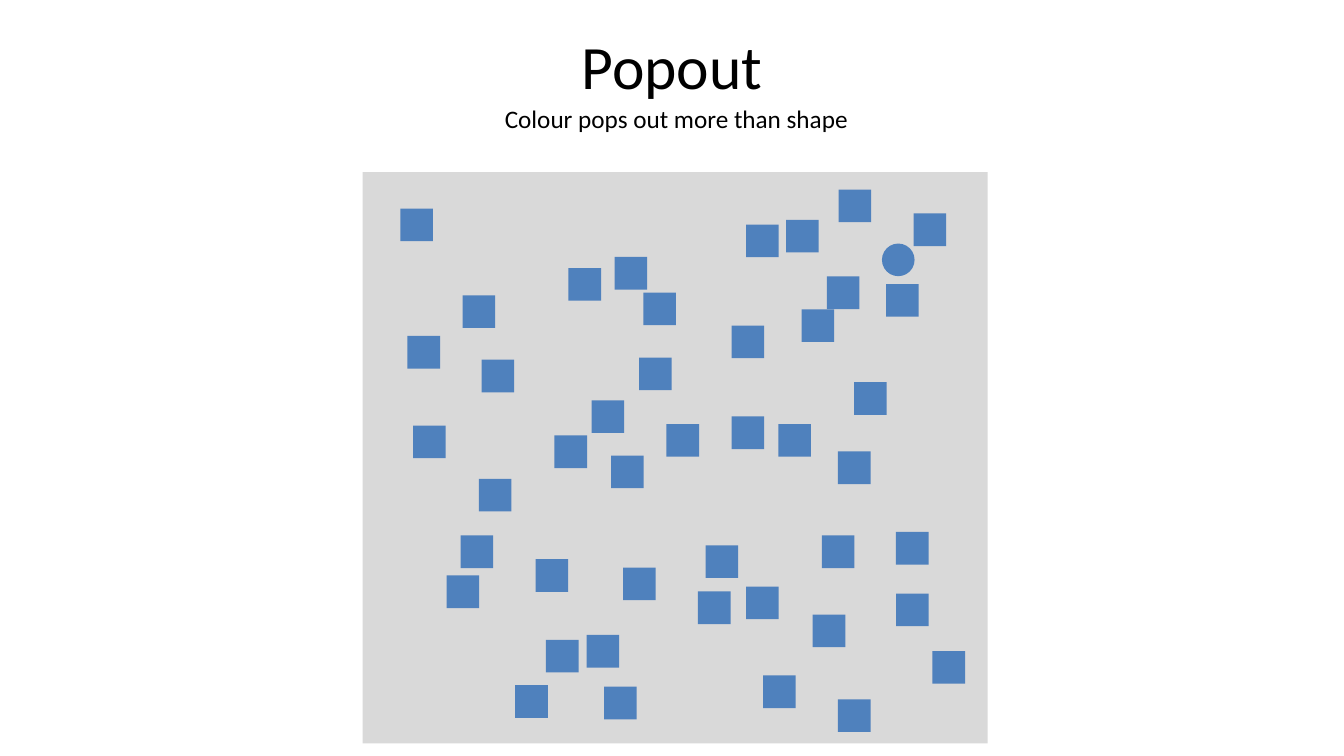
from dataclasses import dataclass

from pptx import Presentation
from pptx.dml.color import RGBColor
from pptx.enum.shapes import MSO_SHAPE
from pptx.enum.text import MSO_ANCHOR, PP_ALIGN
from pptx.util import Pt


@dataclass(frozen=True)
class Theme:
    font: str = "Calibri"
    ink: RGBColor = RGBColor(0, 0, 0)
    panel: RGBColor = RGBColor(0xD9, 0xD9, 0xD9)
    mark: RGBColor = RGBColor(0x4F, 0x81, 0xBD)
    title: int = 44
    body: int = 18


THEME = Theme()
SIDE = 23.3  # width and height of every mark

# Left and top of each square, by its turn in degrees
SQUARES = {
    0: [(286, 149), (533, 419), (633, 203), (342, 342), (456.5, 255.5),
        (330.5, 211), (533, 160.5), (390, 457), (556, 303), (640, 380),
        (436.5, 325.5)],
    90: [(599, 135.5), (329, 382.5), (545, 482.5), (406, 191.5),
         (522.5, 297.5), (572.5, 221), (587, 382.5), (291, 240),
         (445, 405.5), (368, 489.5), (422.5, 286), (652.5, 152.5),
         (382.5, 399.5), (598.5, 499.5), (459.5, 209), (598.5, 322.5),
         (590.5, 197.5), (640, 424), (344, 257), (498.5, 422.5),
         (431.5, 490.5), (476, 303)],
    180: [(666, 465), (439, 183.5), (319, 411), (610, 273), (504, 389.5),
          (580.5, 439), (419, 453.5), (561.5, 157), (396, 311),
          (295, 304), (522.5, 232.5)],
}
CIRCLE = (630, 174)


def add_form(shapes, kind, box, fill, turn=0):
    form = shapes.add_shape(kind, *map(Pt, box))
    form.shadow.inherit = False
    form.fill.solid()
    form.fill.fore_color.rgb = fill
    form.line.fill.background()
    form.rotation = turn


def add_text(shapes, box, text, size, align, anchor, wrap):
    frame = shapes.add_textbox(*map(Pt, box)).text_frame
    frame.word_wrap = wrap
    frame.vertical_anchor = anchor
    para = frame.paragraphs[0]
    para.alignment = align
    run = para.add_run()
    run.text = text
    run.font.name = THEME.font
    run.font.size = Pt(size)
    run.font.color.rgb = THEME.ink


def add_marks(shapes):
    group = shapes.add_group_shape().shapes
    for turn, spots in SQUARES.items():
        for spot in spots:
            add_form(group, MSO_SHAPE.RECTANGLE, (*spot, SIDE, SIDE),
                     THEME.mark, turn)
    add_form(group, MSO_SHAPE.OVAL, (*CIRCLE, SIDE, SIDE), THEME.mark)


def main():
    deck = Presentation()
    deck.slide_width, deck.slide_height = Pt(960), Pt(540)
    shapes = deck.slides.add_slide(deck.slide_layouts[6]).shapes

    # Grey field
    add_form(shapes, MSO_SHAPE.RECTANGLE, (259, 123, 446.5, 408), THEME.panel)

    # Title
    add_text(shapes, (48, 1.5, 864, 90), "Popout", THEME.title,
             PP_ALIGN.CENTER, MSO_ANCHOR.MIDDLE, True)

    # Squares and the odd one out
    add_marks(shapes)

    # Caption
    add_text(shapes, (353.5, 70.5, 263, 29), "Colour pops out more than shape",
             THEME.body, PP_ALIGN.LEFT, MSO_ANCHOR.TOP, False)

    deck.save("out.pptx")


if __name__ == "__main__":
    main()
